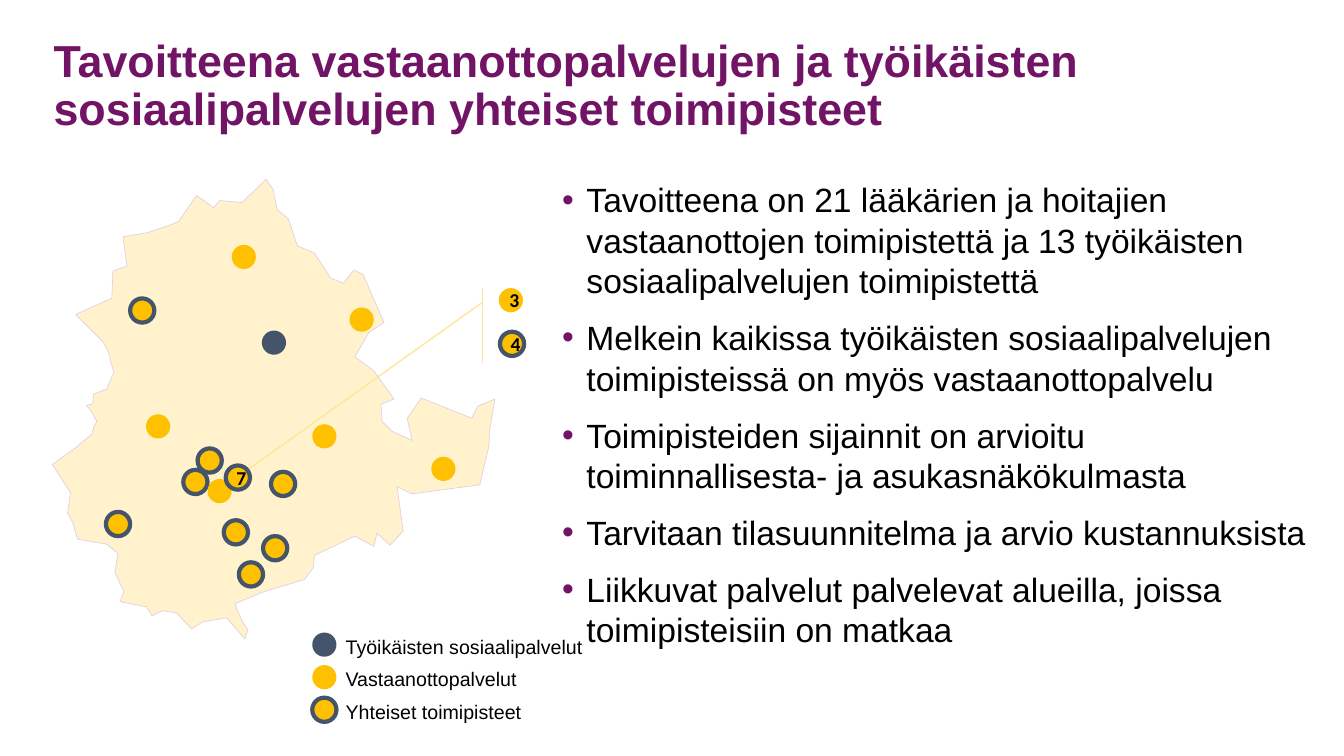
from pptx import Presentation
from pptx import util as u
from pptx.dml.color import RGBColor
from pptx.enum import shapes, text
from pptx.oxml import parse_xml
from pptx.oxml.ns import nsdecls

PURPLE = RGBColor(0x72, 0x14, 0x65)
BLACK = RGBColor(0, 0, 0)
WHITE = RGBColor(255, 255, 255)
GOLD = RGBColor(0xFF, 0xC0, 0x00)
PALE_GOLD = RGBColor(0xFF, 0xE6, 0x99)
SLATE = RGBColor(0x44, 0x54, 0x6A)
CREAM = RGBColor(0xFF, 0xF2, 0xCC)
PINK = RGBColor(0xE3, 0xD0, 0xE0)

DOT = 0.61
INDENT = u.Cm(0.61)
OUTLINE_UNIT = u.Cm(2.54) / 100

SOCIAL = {"fill": SLATE}
RECEPTION = {"fill": GOLD}
SHARED = {"fill": GOLD, "line": SLATE, "weight": 3}

TITLE = "Tavoitteena vastaanottopalvelujen ja työikäisten sosiaalipalvelujen yhteiset toimipisteet"
POINTS = [
    "Tavoitteena on 21 lääkärien ja hoitajien vastaanottojen toimipistettä ja 13 työikäisten sosiaalipalvelujen toimipistettä",
    "Melkein kaikissa työikäisten sosiaalipalvelujen toimipisteissä on myös vastaanottopalvelu",
    "Toimipisteiden sijainnit on arvioitu toiminnallisesta- ja asukasnäkökulmasta",
    "Tarvitaan tilasuunnitelma ja arvio kustannuksista",
    "Liikkuvat palvelut palvelevat alueilla, joissa toimipisteisiin on matkaa",
]
LEGEND = [
    ("Työikäisten sosiaalipalvelut", 6.5, SOCIAL),
    ("Vastaanottopalvelut", 4.85, RECEPTION),
    ("Yhteiset toimipisteet", 5.1, SHARED),
]
SITES = [
    (6.6, 8.33, SOCIAL), (10.87, 11.51, RECEPTION), (8.81, 7.75, RECEPTION),
    (5.84, 6.17, RECEPTION), (2.67, 12.9, SHARED), (6.02, 14.17, SHARED),
    (6.63, 13.51, SHARED), (4.62, 11.84, SHARED), (5.23, 12.07, RECEPTION),
    (4.98, 11.3, SHARED), (5.64, 13.11, SHARED), (7.87, 10.69, RECEPTION),
    (6.83, 11.89, SHARED), (3.28, 7.52, SHARED), (3.68, 10.44, RECEPTION),
]
COUNTS = [
    (12.6, 8.36, SHARED, "4"), (12.57, 7.26, RECEPTION, "3"), (5.69, 11.73, SHARED, "7"),
]
REGION = [
    (264, 178), (271, 188), (275, 208), (286, 217), (295, 244), (312, 251),
    (328, 276), (341, 281), (351, 268), (360, 272), (381, 320), (366, 330),
    (352, 354), (371, 368), (391, 396), (378, 401), (379, 418), (389, 428),
    (409, 437), (404, 415), (418, 395), (468, 415), (474, 403), (491, 396),
    (486, 426), (485, 443), (476, 481), (409, 490), (394, 483), (400, 527),
    (387, 541), (374, 529), (371, 542), (352, 532), (312, 551), (311, 563),
    (302, 575), (262, 587), (233, 599), (237, 609), (240, 616), (246, 625),
    (243, 634), (225, 613), (201, 617), (190, 624), (175, 608), (161, 606),
    (151, 611), (145, 602), (119, 597), (123, 587), (114, 568), (117, 549),
    (106, 540), (77, 535), (72, 518), (67, 509), (70, 489), (52, 461),
    (74, 445), (91, 431), (93, 424), (96, 418), (91, 409), (86, 402),
    (92, 401), (93, 391), (106, 386), (113, 369), (110, 360), (109, 353),
    (103, 340), (91, 328), (75, 312), (111, 296), (112, 269), (126, 264),
    (122, 235), (146, 231), (167, 224), (177, 220), (195, 194), (212, 206),
    (218, 199), (240, 201),
]


class Sketch:
    """Draws styled elements on the current slide."""

    def __init__(self, page):
        self.page = page
        self.font = {"name": "Arial", "size": u.Pt(14), "bold": False}

    def add_words(self, para, words, color=BLACK, **changes):
        span = para.add_run()
        span.text = words
        for key, value in {**self.font, **changes}.items():
            setattr(span.font, key, value)
        span.font.color.rgb = color

    def paint(self, shape, fill, line=None, weight=1):
        shape.shadow.inherit = False
        shape.fill.solid()
        shape.fill.fore_color.rgb = fill
        if line is None:
            shape.line.fill.background()
        else:
            shape.line.color.rgb = line
            shape.line.width = u.Pt(weight)

    def frame(self, box, **values):
        for key, value in values.items():
            setattr(box.text_frame, key, value)
        return box.text_frame

    def unpadded(self, box, **values):
        sides = ("left", "top", "right", "bottom")
        margins = {f"margin_{side}": 0 for side in sides}
        return self.frame(box, word_wrap=True, **margins, **values)

    def title(self, words, left, top, width, height):
        box = self.page.shapes.title
        place = {"left": left, "top": top, "width": width, "height": height}
        for key, value in place.items():
            setattr(box, key, u.Cm(value))
        frame = self.unpadded(box, vertical_anchor=text.MSO_ANCHOR.MIDDLE)
        para = frame.paragraphs[0]
        para.alignment = text.PP_ALIGN.LEFT
        para.line_spacing = 0.9
        self.add_words(para, words, PURPLE, size=u.Pt(32), bold=True)

    def region(self, points):
        builder = self.page.shapes.build_freeform(*points[0], scale=OUTLINE_UNIT)
        builder.add_line_segments(points[1:])
        self.paint(builder.convert_to_shape(), CREAM, PINK, 0.5)

    def dot(self, left, top, style, count=None):
        shape = self.page.shapes.add_shape(
            shapes.MSO_SHAPE.OVAL, u.Cm(left), u.Cm(top), u.Cm(DOT), u.Cm(DOT))
        self.paint(shape, **style)
        if count:
            frame = self.frame(shape, vertical_anchor=text.MSO_ANCHOR.MIDDLE)
            para = frame.paragraphs[0]
            para.alignment = text.PP_ALIGN.CENTER
            self.add_words(para, count, name="Calibri", bold=True)

    def label(self, words, left, top, width):
        box = self.page.shapes.add_textbox(u.Cm(left), u.Cm(top), u.Cm(width), u.Cm(0.86))
        frame = self.frame(box, word_wrap=False, auto_size=text.MSO_AUTO_SIZE.SHAPE_TO_FIT_TEXT)
        self.add_words(frame.paragraphs[0], words)

    def callout(self, left, top, width, height, adjustments):
        shape = self.page.shapes.add_shape(
            shapes.MSO_SHAPE.LINE_CALLOUT_1_ACCENT_BAR,
            u.Cm(left), u.Cm(top), u.Cm(width), u.Cm(height))
        self.paint(shape, WHITE, PALE_GOLD)
        for index, value in enumerate(adjustments):
            shape.adjustments[index] = value

    def bullets(self, points, left, top, width, height):
        box = self.page.shapes.add_textbox(u.Cm(left), u.Cm(top), u.Cm(width), u.Cm(height))
        frame = self.unpadded(box)
        for index, words in enumerate(points):
            para = frame.add_paragraph() if index else frame.paragraphs[0]
            para.space_after = u.Pt(12)
            props = para._p.get_or_add_pPr()
            props.set("marL", str(INDENT))
            props.set("indent", str(-INDENT))
            props.append(parse_xml(
                f'<a:buClr {nsdecls("a")}><a:srgbClr val="{PURPLE}"/></a:buClr>'))
            props.append(parse_xml(f'<a:buFont {nsdecls("a")} typeface="Arial"/>'))
            props.append(parse_xml(f'<a:buChar {nsdecls("a")} char="•"/>'))
            self.add_words(para, words, size=u.Pt(24))


def main():
    deck = Presentation()
    deck.slide_width, deck.slide_height = u.Cm(33.87), u.Cm(19.05)
    sketch = Sketch(deck.slides.add_slide(deck.slide_layouts[5]))
    sketch.title(TITLE, 1.35, 0.91, 31.19, 2.57)
    sketch.region(REGION)
    for row, (words, width, style) in enumerate(LEGEND):
        top = 15.94 + 0.82 * row
        sketch.dot(7.87, top, style)
        sketch.label(words, 8.46, top - 0.07, width)
    for site in SITES:
        sketch.dot(*site)
    sketch.callout(12.47, 7.26, 3.86, 1.88, (0.19, -0.08, 2.46, -1.63))
    for count in COUNTS:
        sketch.dot(*count)
    sketch.bullets(POINTS, 14.17, 4.52, 19, 12.65)
    deck.save("out.pptx")


if __name__ == "__main__":
    main()
